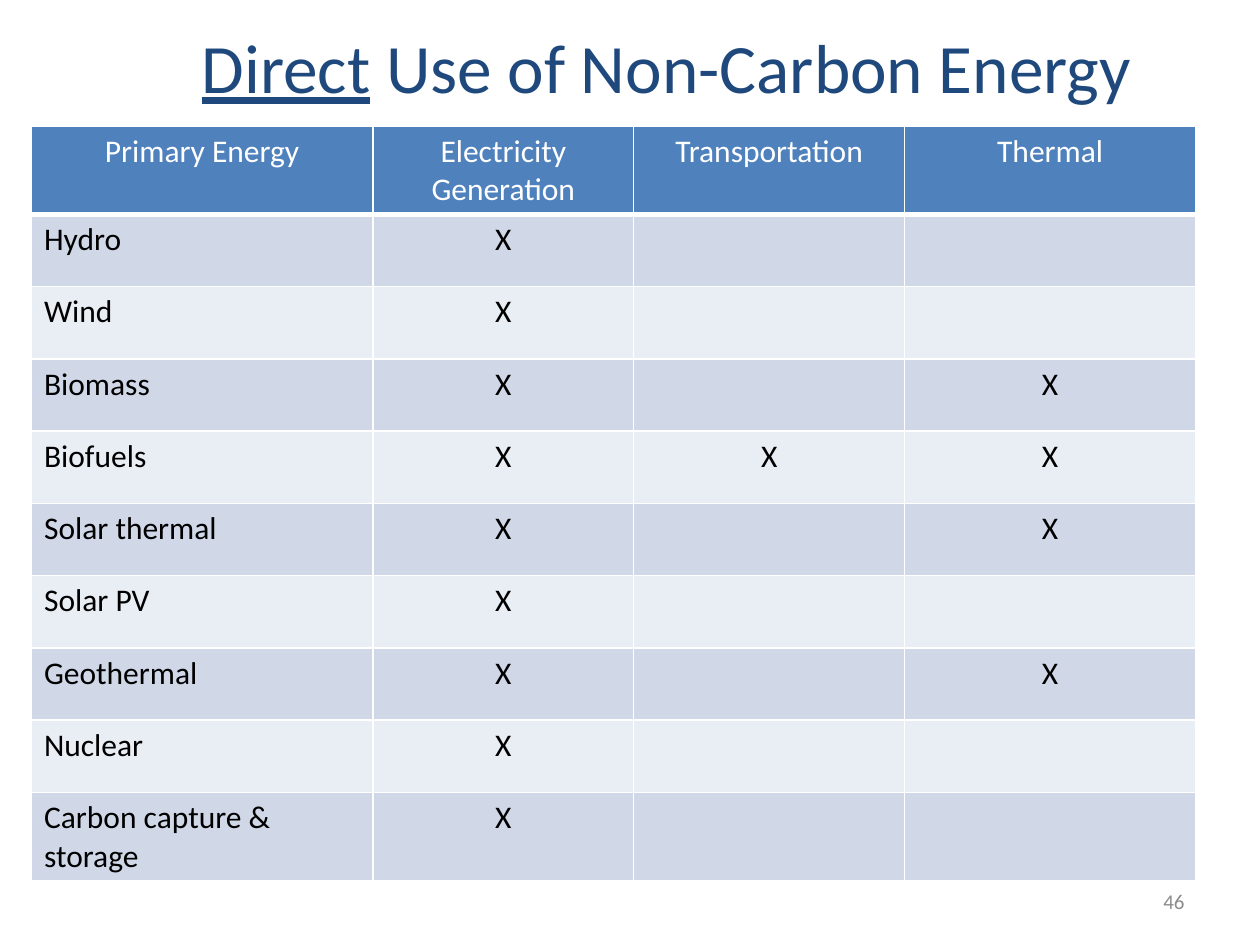
from lxml import etree
from pptx import Presentation
from pptx.dml.color import RGBColor
from pptx.enum import text
from pptx.oxml import ns
from pptx.util import Inches, Pt

THEME = {
    "font": "Calibri",
    "title": "1F497D", "header": "4F81BD", "bands": ("D0D8E8", "E9EDF4"),
    "light": "FFFFFF", "dark": "000000", "muted": "8C8C8C",
    "title_size": 39.6, "table_size": 18, "number_size": 12,
    "border": 1, "header_border": 3,
}
TITLE = (("Direct", True), (" Use of Non-Carbon Energy", False))
PAGE_NUMBER = "46"
HEADERS = ("Primary Energy", "Electricity Generation", "Transportation", "Thermal")
ENERGY_USES = (
    ("Hydro", "X", "", ""),
    ("Wind", "X", "", ""),
    ("Biomass", "X", "", "X"),
    ("Biofuels", "X", "X", "X"),
    ("Solar thermal", "X", "", "X"),
    ("Solar PV", "X", "", ""),
    ("Geothermal", "X", "", "X"),
    ("Nuclear", "X", "", ""),
    ("Carbon capture & storage", "X", "", ""),
)
COLUMN_WIDTHS = (2.71, 2.07, 2.15, 2.31)
HEADER_HEIGHT, ROW_HEIGHT = 0.67, 0.574
TITLE_BOX = (1.08, 0.3, 8.42, 0.45)
NUMBER_BOX = (7.17, 6.95, 2.33, 0.4)
TABLE_LEFT, TABLE_TOP = 0.25, 1


def style_paragraph(paragraph, size, color, alignment):
    paragraph.alignment = alignment
    paragraph.font.name = THEME["font"]
    paragraph.font.size = Pt(size)
    paragraph.font.color.rgb = RGBColor.from_string(color)


def add_line(slide, box, runs, size, color, alignment):
    frame = slide.shapes.add_textbox(*map(Inches, box)).text_frame
    frame.word_wrap = True
    frame.vertical_anchor = text.MSO_ANCHOR.MIDDLE
    paragraph = frame.paragraphs[0]
    style_paragraph(paragraph, size, color, alignment)
    for words, underlined in runs:
        run = paragraph.add_run()
        run.text = words
        if underlined:
            run.font.underline = True


def set_borders(cell, bottom_width):
    properties = cell._tc.get_or_add_tcPr()
    for index, side in enumerate("LRTB"):
        width = bottom_width if side == "B" else THEME["border"]
        line = etree.Element(ns.qn(f"a:ln{side}"), w=str(Pt(width)))
        fill = etree.SubElement(line, ns.qn("a:solidFill"))
        etree.SubElement(fill, ns.qn("a:srgbClr"), val=THEME["light"])
        properties.insert(index, line)


def add_energy_table(slide):
    rows = (HEADERS, *ENERGY_USES)
    heights = [HEADER_HEIGHT] + [ROW_HEIGHT] * len(ENERGY_USES)
    box = (TABLE_LEFT, TABLE_TOP, sum(COLUMN_WIDTHS), sum(heights))
    table = slide.shapes.add_table(len(rows), len(HEADERS), *map(Inches, box)).table
    for column, width in zip(table.columns, COLUMN_WIDTHS):
        column.width = Inches(width)
    for row_index, (row, height, values) in enumerate(zip(table.rows, heights, rows)):
        row.height = Inches(height)
        is_header = row_index == 0
        fill = THEME["header"] if is_header else THEME["bands"][(row_index - 1) % 2]
        color = THEME["light"] if is_header else THEME["dark"]
        for column_index, (cell, value) in enumerate(zip(row.cells, values)):
            cell.text = value
            is_label = column_index == 0 and not is_header
            alignment = text.PP_ALIGN.LEFT if is_label else text.PP_ALIGN.CENTER
            paragraph = cell.text_frame.paragraphs[0]
            style_paragraph(paragraph, THEME["table_size"], color, alignment)
            paragraph.font.bold = False
            cell.fill.solid()
            cell.fill.fore_color.rgb = RGBColor.from_string(fill)
            set_borders(cell, THEME["header_border" if is_header else "border"])


def main():
    """Build the slide on direct uses of non-carbon energy."""
    presentation = Presentation()
    presentation.slide_width, presentation.slide_height = Inches(10), Inches(7.5)
    slide = presentation.slides.add_slide(presentation.slide_layouts[6])
    add_line(slide, TITLE_BOX, TITLE, THEME["title_size"], THEME["title"],
             text.PP_ALIGN.CENTER)
    add_energy_table(slide)
    add_line(slide, NUMBER_BOX, ((PAGE_NUMBER, False),), THEME["number_size"],
             THEME["muted"], text.PP_ALIGN.RIGHT)
    presentation.save("out.pptx")


if __name__ == "__main__":
    main()
